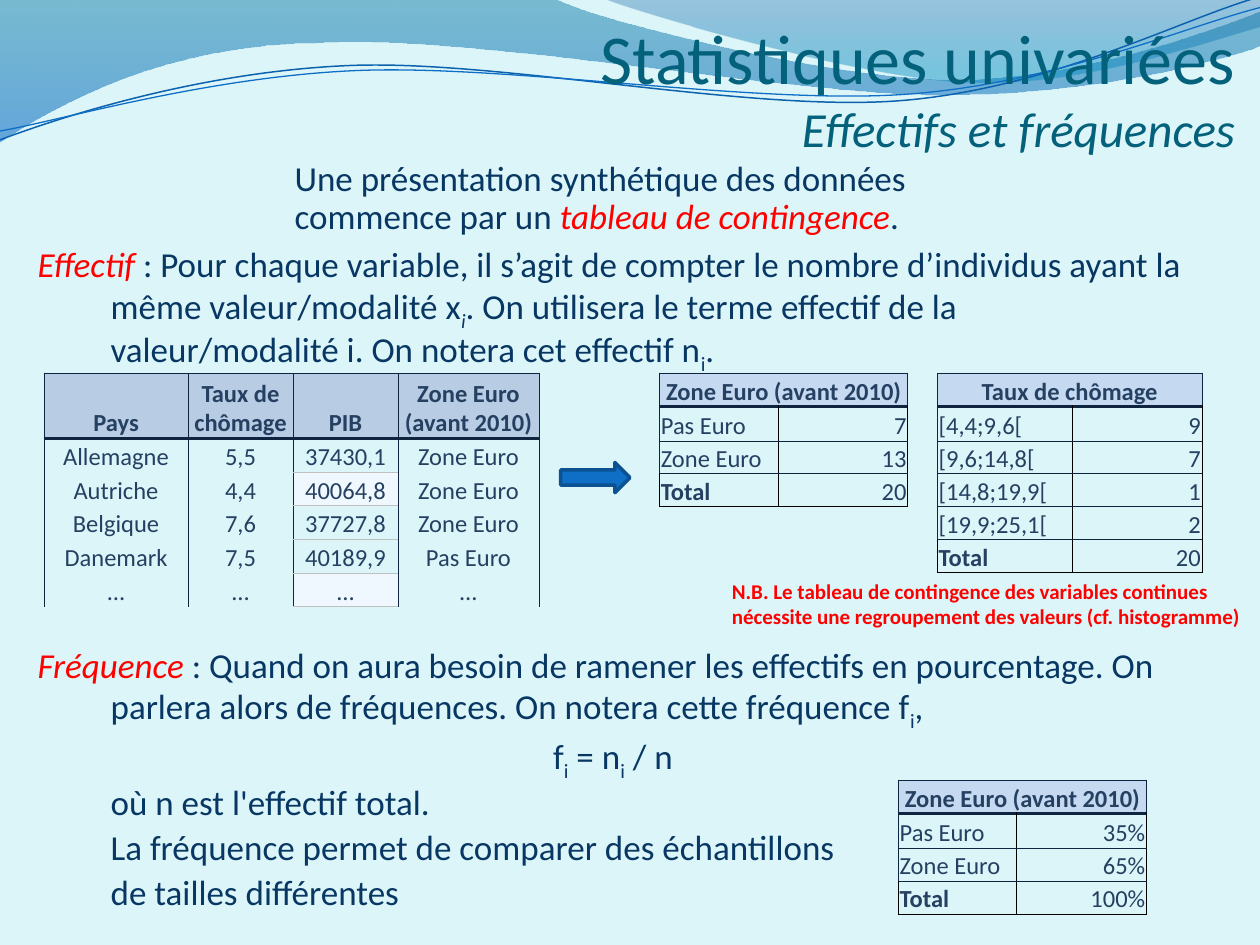
import math
from dataclasses import dataclass
from lxml import etree
from pptx import Presentation
from pptx import util as u
from pptx.dml.color import RGBColor
from pptx.enum import shapes, text
from pptx.oxml.ns import qn


@dataclass(frozen=True)
class Theme:
    font: str = "Calibri"
    sky: str = "DBF5F9"
    title: str = "04617B"
    body: str = "083763"
    accent: str = "FF0000"
    cell: str = "254061"
    rule: str = "0F253F"
    black: str = "000000"
    soft_rule: str = "C0C0C0"
    header: str = "C5D9F1"
    data_header: str = "B8CCE4"
    stripe: str = "F0F8FF"
    arrow: str = "0F6FC6"
    arrow_line: str = "0B5292"
    strand: str = "0D62AF"
    title_size: int = 40
    subtitle_size: int = 28
    body_size: int = 20
    cell_size: int = 14
    note_size: int = 12


THEME = Theme()
LEFT, CENTER, RIGHT = text.PP_ALIGN.LEFT, text.PP_ALIGN.CENTER, text.PP_ALIGN.RIGHT
THIN, THICK = 0.5, 2


def rgb(code):
    return RGBColor.from_string(code)


class Page:
    COLUMNS, ROWS = 100, 75

    def __init__(self, deck, theme):
        self.theme = theme
        self.unit_x = deck.slide_width / self.COLUMNS
        self.unit_y = deck.slide_height / self.ROWS
        self.slide = deck.slides.add_slide(deck.slide_layouts[6])
        self.slide.background.fill.solid()
        self.slide.background.fill.fore_color.rgb = rgb(theme.sky)

    def x(self, columns):
        return u.Emu(round(columns * self.unit_x))

    def y(self, rows):
        return u.Emu(round(rows * self.unit_y))

    def box(self, left, top, width, height):
        return self.x(left), self.y(top), self.x(width), self.y(height)

    def style(self, run, size, color, bold=False, italic=False):
        run.font.name = self.theme.font
        run.font.size = u.Pt(size)
        run.font.bold, run.font.italic = bold, italic
        run.font.color.rgb = rgb(color)

    def outline(self, start, bends, lines=()):
        spots = [(self.x(a), self.y(b)) for a, b in [start, *bends, *lines]]
        builder = self.slide.shapes.build_freeform(*spots[0], scale=1.0)
        builder.add_line_segments(spots[1:], close=bool(lines))
        shape = builder.convert_to_shape()
        shape.shadow.inherit = False
        sides = shape._element.findall(".//" + qn("a:lnTo"))
        straight = {bends.index(point) for point in bends if bends.count(point) == 3}
        curved = [side for i, side in enumerate(sides[:len(bends)]) if i not in straight]
        for first in range(0, len(curved), 3):
            bend = etree.Element(qn("a:cubicBezTo"))
            curved[first].addprevious(bend)
            for side in curved[first:first + 3]:
                bend.append(side[0])
                side.getparent().remove(side)
        return shape

    def wave(self, start, bends, lines, stops):
        shape = self.outline(start, bends, lines)
        shape.line.fill.background()
        shape.fill.gradient()
        shape.fill.gradient_angle = 270
        for stop, (position, color, _) in zip(shape.fill.gradient_stops, stops):
            stop.position, stop.color.rgb = position, rgb(color)
        colors = shape._element.spPr.findall(".//" + qn("a:gs") + "/" + qn("a:srgbClr"))
        for color, (_, _, opacity) in zip(colors, stops):
            etree.SubElement(color, qn("a:alpha"), val=str(opacity * 1000))

    def strand(self, center, points, color, width, tilt=2.7):
        cos, sin = math.cos(math.radians(tilt)), math.sin(math.radians(tilt))
        cx, cy = center
        level = [(cx + (a - cx) * cos - (b - cy) * sin, cy + (a - cx) * sin + (b - cy) * cos)
                 for a, b in points]
        shape = self.outline(level[0], level[1:])
        shape.rotation = 360 - tilt
        shape.fill.background()
        shape.line.color.rgb, shape.line.width = rgb(color), u.Pt(width)

    def arrow(self, *place):
        shape = self.slide.shapes.add_shape(shapes.MSO_SHAPE.RIGHT_ARROW, *self.box(*place))
        shape.shadow.inherit = False
        shape.fill.solid()
        shape.fill.fore_color.rgb = rgb(self.theme.arrow)
        shape.line.color.rgb, shape.line.width = rgb(self.theme.arrow_line), u.Pt(2)

    def frame(self, *place):
        frame = self.slide.shapes.add_textbox(*self.box(*place)).text_frame
        frame.word_wrap = True
        return frame

    def title(self, place, heading, subheading):
        frame = self.frame(*place)
        frame.vertical_anchor = text.MSO_ANCHOR.BOTTOM
        frame.margin_left = frame.margin_right = frame.margin_bottom = 0
        paragraph = frame.paragraphs[0]
        paragraph.text = heading + "\v" + subheading
        paragraph.alignment = RIGHT
        upper, lower = paragraph.runs
        self.style(upper, self.theme.title_size, self.theme.title)
        self.style(lower, self.theme.subtitle_size, self.theme.title, italic=True)

    def prose(self, place, *paragraphs):
        frame = self.frame(*place)
        for index, (align, before, margin, indent, pieces) in enumerate(paragraphs):
            paragraph = frame.add_paragraph() if index else frame.paragraphs[0]
            paragraph.alignment, paragraph.line_spacing = align, 0.9
            paragraph.space_before = u.Pt(before)
            layout = paragraph._p.get_or_add_pPr()
            layout.set("marL", str(self.x(margin)))
            layout.set("indent", str(self.x(indent)))
            for words, role in pieces:
                run = paragraph.add_run()
                run.text = words
                color = self.theme.accent if role == "term" else self.theme.body
                self.style(run, self.theme.body_size, color, italic=role in ("term", "italic sub"))
                if role.endswith("sub"):
                    run._r.get_or_add_rPr().set("baseline", "-25000")

    def note(self, place, words):
        frame = self.frame(*place)
        frame.text = words
        self.style(frame.paragraphs[0].runs[0], self.theme.note_size, self.theme.accent, bold=True)

    def borders(self, cell, edges):
        properties = cell._tc.get_or_add_tcPr()
        for index, side in enumerate("LRTB"):
            color, width = edges.get(side, (None, THIN))
            line = etree.Element(qn("a:ln" + side), w=str(u.Pt(width)))
            fill = etree.SubElement(line, qn("a:solidFill" if color else "a:noFill"))
            if color:
                etree.SubElement(fill, qn("a:srgbClr"), val=color)
            properties.insert(index, line)

    def table(self, left, top, widths, heights, rows, aligns, look):
        place = self.box(left, top, sum(widths), sum(heights))
        graphic = self.slide.shapes.add_table(len(rows), len(widths), *place)
        table = graphic.table
        table.first_row = table.horz_banding = False
        style = graphic._element.find(".//" + qn("a:tableStyleId"))
        style.text = "{2D5ABB26-0587-4C30-8999-92F81FD0307C}"
        for column, width in zip(table.columns, widths):
            column.width = self.x(width)
        for r, (row, height) in enumerate(zip(rows, heights)):
            table.rows[r].height = self.y(height)
            for c, words in enumerate(row):
                cell = table.cell(r, c)
                cell.text = words
                cell.vertical_anchor = text.MSO_ANCHOR.BOTTOM
                cell.margin_left = cell.margin_right = cell.margin_top = self.x(0.1)
                cell.margin_bottom = 0
                paragraph = cell.text_frame.paragraphs[0]
                paragraph.alignment = aligns[c] if r else CENTER
                for run in paragraph.runs:
                    self.style(run, self.theme.cell_size, self.theme.cell,
                               bold=r == 0 or words == "Total")
                fill, edges = look(r, c)
                if fill:
                    cell.fill.solid()
                    cell.fill.fore_color.rgb = rgb(fill)
                else:
                    cell.fill.background()
                self.borders(cell, edges)
        return table

    def counts(self, left, top, label_width, heading, rows):
        dark, black = (self.theme.rule, THIN), (self.theme.black, THIN)
        heavy = (self.theme.rule, THICK)

        def look(r, c):
            if r == 0:
                return self.theme.header, dict(L=dark, R=dark, T=dark, B=heavy)
            last = r == len(rows)
            return None, dict(L=black if c or last else dark, R=black,
                              T=heavy if r == 1 else dark, B=black if last else dark)

        heights = [2.7, 2.7] + [2.62] * (len(rows) - 1)
        table = self.table(left, top, [label_width, 10.3], heights,
                           [(heading, "")] + rows, (LEFT, RIGHT), look)
        table.cell(0, 0).merge(table.cell(0, 1))

    def records(self, left, top, widths, rows):
        dark, soft = (self.theme.rule, THIN), (self.theme.soft_rule, THIN)
        heavy = (self.theme.rule, THICK)

        def look(r, c):
            if r == 0:
                return self.theme.data_header, dict(L=dark, R=dark, T=dark, B=heavy)
            edges = dict(L=dark, R=dark)
            if c == 2:
                edges.update(T=soft, B=soft)
            if r == 1:
                edges["T"] = heavy
            return (self.theme.stripe if c == 2 and r in (2, 5) else None), edges

        self.table(left, top, widths, [5.2] + [2.67] * (len(rows) - 1), rows, [CENTER] * 4, look)


def main():
    deck = Presentation()
    deck.slide_width, deck.slide_height = u.Inches(10), u.Inches(7.5)
    page = Page(deck, THEME)

    page.wave((44, -0.1),
              [(47.6, 1.7), (66.4, 6.3), (75.8, 6.3), (85.3, 6.3), (95.8, 2.6), (100, 0.9),
               (100, 1.8), (100.1, 2.7), (100.1, 3.6),
               (98.3, 4.4), (87, 7.6), (74.6, 7.5), (62.2, 7.5), (38.2, 2.8), (25.7, 3.4),
               (12.9, 3.5), (4.6, 8.3), (-0.1, 11.3)], [(0, -0.1)],
              [(0, "0074A1", 45), (1, "0065C1", 55)])
    page.wave((47.9, -0.1),
              [(50.9, 1.1), (68.2, 6.2), (76.9, 6.5), (85.6, 6.9), (96.1, 3.2), (100, 2.1)],
              [(100, 0)], [(0, "00539E", 30), (0.8, "008BBF", 45)])
    page.strand((49.9, 5.75),
                [(0, 11.1), (4.8, 9.3), (15.8, 5.7), (27.7, 5.2), (39.5, 4.7), (59.3, 8.9),
                 (71.3, 8), (83.3, 7.1), (93.8, 1.5), (99.8, -0.2)], THEME.strand, 0.85)
    page.strand((49.95, 5.9),
                [(0, 10.4), (4.7, 9.6), (16.4, 6.1), (28.3, 5.6), (40.3, 5.1), (59.7, 8.3),
                 (71.7, 7.5), (83.6, 6.7), (94.1, 2.1), (100, 0.6)], THEME.arrow, 0.75)

    page.title((15.4, 0, 82.6, 12.5), "Statistiques univariées", "Effectifs et fréquences")
    page.prose(
        (2, 19.15, 93.3, 55.8),
        (LEFT, 0, 5.8, -5.8, [
            ("Effectif", "term"),
            (" : Pour chaque variable, il s’agit de compter le nombre d’individus ayant la même "
             "valeur/modalité x", ""), ("i", "italic sub"),
            (". On utilisera le terme effectif de la valeur/modalité i. "
             "On notera cet effectif n", ""), ("i", "sub"), (".", "")]),
        (LEFT, 158, 5.8, -5.8, [
            ("Fréquence", "term"),
            (" : Quand on aura besoin de ramener les effectifs en pourcentage. On parlera alors "
             "de fréquences. On notera cette fréquence f", ""), ("i", "sub"), (",", "")]),
        (CENTER, 4, 0, 0, [("f", ""), ("i", "sub"), (" = n", ""), ("i", "sub"), (" / n", "")]),
        *[(LEFT, 4, 5.8, 0, [(line, "")]) for line in (
            "où n est l'effectif total.",
            "La fréquence permet de comparer des échantillons",
            "de tailles différentes")])
    page.counts(74.4, 29.6, 10.7, "Taux de chômage", [
        ("[4,4;9,6[", "9"), ("[9,6;14,8[", "7"), ("[14,8;19,9[", "1"),
        ("[19,9;25,1[", "2"), ("Total", "20")])
    page.prose((22.4, 12.3, 54.3, 7.1), (LEFT, 0, 0, 0, [
        ("Une présentation synthétique des données commence par un ", ""),
        ("tableau de contingence", "term"), (".", "")]))
    zones = "Pas Euro", "Zone Euro", "Total"
    for left, top, values in ((71.3, 61.9, ("35%", "65%", "100%")),
                              (52.35, 29.6, ("7", "13", "20"))):
        page.counts(left, top, 9.4, "Zone Euro (avant 2010)", list(zip(zones, values)))
    page.records(3.5, 29.6, [11.43, 8.33, 8.33, 11.2], [
        ("Pays", "Taux de chômage", "PIB", "Zone Euro (avant 2010)"),
        ("Allemagne", "5,5", "37430,1", "Zone Euro"),
        ("Autriche", "4,4", "40064,8", "Zone Euro"),
        ("Belgique", "7,6", "37727,8", "Zone Euro"),
        ("Danemark", "7,5", "40189,9", "Pas Euro"),
        ("…",) * 4])
    page.arrow(44.5, 36.7, 5.5, 2.4)
    page.note((57.1, 45.4, 42.9, 5), "N.B. Le tableau de contingence des variables continues "
              "nécessite une regroupement des valeurs (cf. histogramme)")
    deck.save("out.pptx")


if __name__ == "__main__":
    main()
